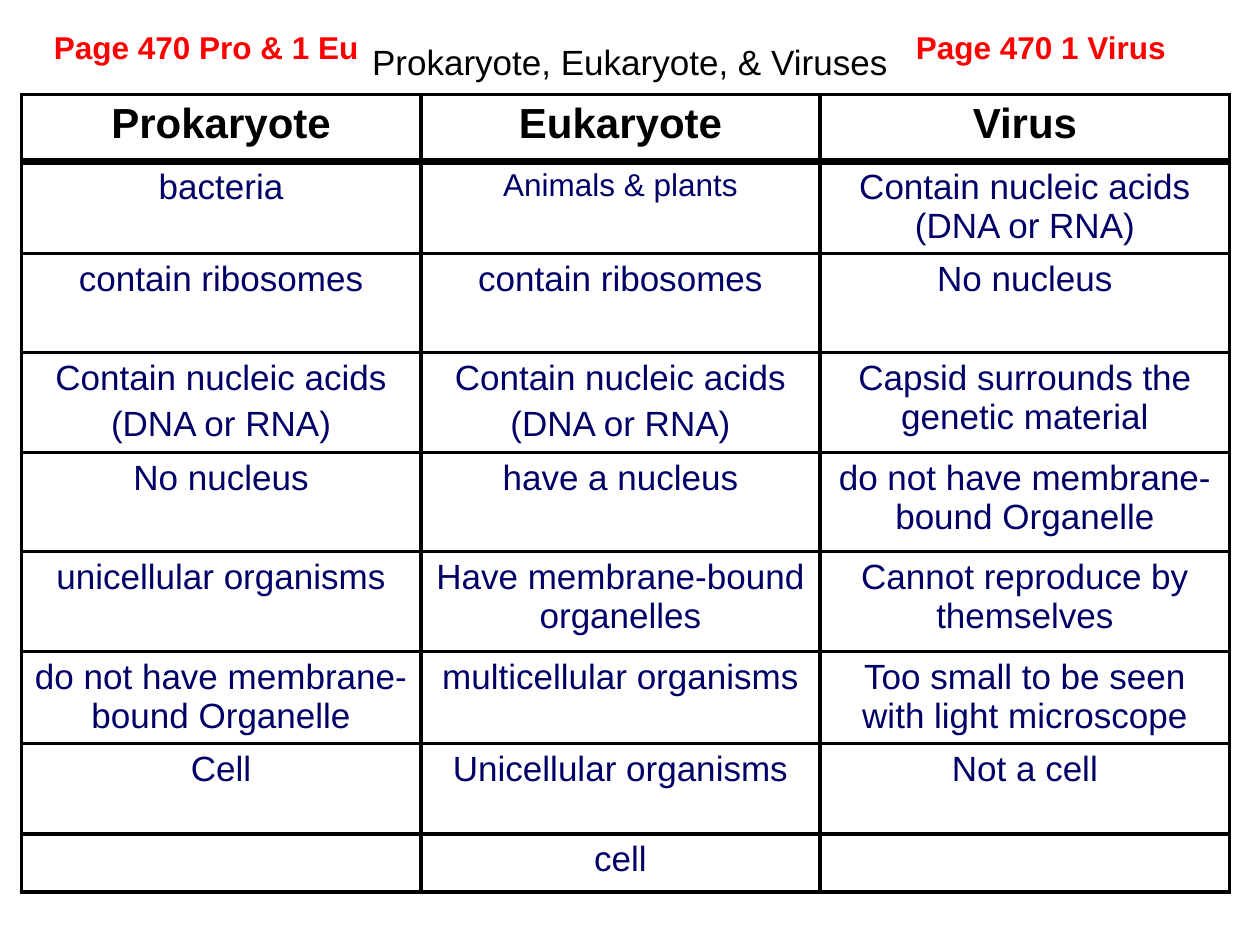
from typing import NamedTuple

from lxml.etree import SubElement
from pptx import Presentation
from pptx.dml.color import RGBColor
from pptx.enum.text import MSO_ANCHOR, PP_ALIGN
from pptx.oxml.ns import qn
from pptx.util import Inches, Pt

BLACK, NAVY, RED = "000000", "000066", "FF0000"


class PageNote(NamedTuple):
    text: str
    left: float
    width: float


NOTES = [
    PageNote("Page 470 Pro & 1 Eu", 0.33, 2.83),
    PageNote("Page 470 1 Virus", 7.17, 2.58),
]
COL_WIDTHS = [3.17, 3.17, 3.25]
ROW_HEIGHTS = [0.53, 0.73, 0.79, 0.79, 0.79, 0.79, 0.73, 0.72, 0.46]
ACIDS = "Contain nucleic acids\n(DNA or RNA)"
NO_ORGANELLES = "do not have membrane-\nbound Organelle"
ROWS = [
    ["Prokaryote", "Eukaryote", "Virus"],
    ["bacteria", "Animals & plants", ACIDS],
    ["contain ribosomes", "contain ribosomes", "No nucleus"],
    [ACIDS, ACIDS, "Capsid surrounds the\ngenetic material"],
    ["No nucleus", "have a nucleus", NO_ORGANELLES],
    ["unicellular organisms", "Have membrane-bound\norganelles",
     "Cannot reproduce by\nthemselves"],
    [NO_ORGANELLES, "multicellular organisms",
     "Too small to be seen\nwith light microscope"],
    ["Cell", "Unicellular organisms", "Not a cell"],
    ["", "cell", ""],
]
SMALL_CELL = (1, 1)
SPACED_CELLS = {(3, 0), (3, 1)}


def rgb(color: str) -> RGBColor:
    return RGBColor.from_string(color)


def style(p, size: float, color: str, bold: bool = False,
          align=PP_ALIGN.CENTER) -> None:
    p.alignment = align
    p.font.name = "Arial"
    p.font.size = Pt(size)
    p.font.bold = bold
    p.font.color.rgb = rgb(color)


def add_border(cell, side: str, width: float) -> None:
    ln = SubElement(cell._tc.get_or_add_tcPr(), qn(f"a:ln{side}"),
                    w=str(Pt(width)))
    fill = SubElement(ln, qn("a:solidFill"))
    SubElement(fill, qn("a:srgbClr"), val=BLACK)


def fill_cell(cell, row: int, col: int) -> None:
    for side in "LRTB":
        heavy = (row, side) in {(0, "B"), (1, "T")}
        add_border(cell, side, 4.5 if heavy else 2.25)
    cell.fill.background()
    cell.text = ROWS[row][col]
    header = row == 0
    size = 24 if header else 18 if (row, col) == SMALL_CELL else 20
    for i, p in enumerate(cell.text_frame.paragraphs):
        style(p, size, BLACK if header else NAVY, header)
        if i and (row, col) in SPACED_CELLS:
            p.space_before = Pt(4)


def add_comparison(s) -> None:
    table = s.shapes.add_table(
        len(ROWS), len(COL_WIDTHS), Inches(0.17), Inches(0.75),
        Inches(sum(COL_WIDTHS)), Inches(sum(ROW_HEIGHTS))).table
    table.first_row = table.horz_banding = False
    for column, width in zip(table.columns, COL_WIDTHS):
        column.width = Inches(width)
    for r, height in enumerate(ROW_HEIGHTS):
        table.rows[r].height = Inches(height)
        for c in range(len(COL_WIDTHS)):
            fill_cell(table.cell(r, c), r, c)


def add_title(s, text: str) -> None:
    title = s.shapes.title
    title.left, title.top = Inches(0), Inches(0.3)
    title.width, title.height = Inches(10), Inches(0.37)
    tf = title.text_frame
    tf.text = text
    tf.vertical_anchor = MSO_ANCHOR.MIDDLE
    style(tf.paragraphs[0], 20, BLACK)


def add_note(s, note: PageNote) -> None:
    tf = s.shapes.add_textbox(Inches(note.left), Inches(0.17),
                              Inches(note.width), Inches(0.4)).text_frame
    tf.word_wrap = True
    tf.text = note.text
    style(tf.paragraphs[0], 18, RED, True, PP_ALIGN.LEFT)


def main() -> None:
    prs = Presentation()
    prs.slide_width, prs.slide_height = Inches(10), Inches(7.5)
    s = prs.slides.add_slide(prs.slide_layouts[5])
    add_title(s, "Prokaryote, Eukaryote, & Viruses")
    add_comparison(s)
    for note in NOTES:
        add_note(s, note)
    prs.save("out.pptx")


if __name__ == "__main__":
    main()
